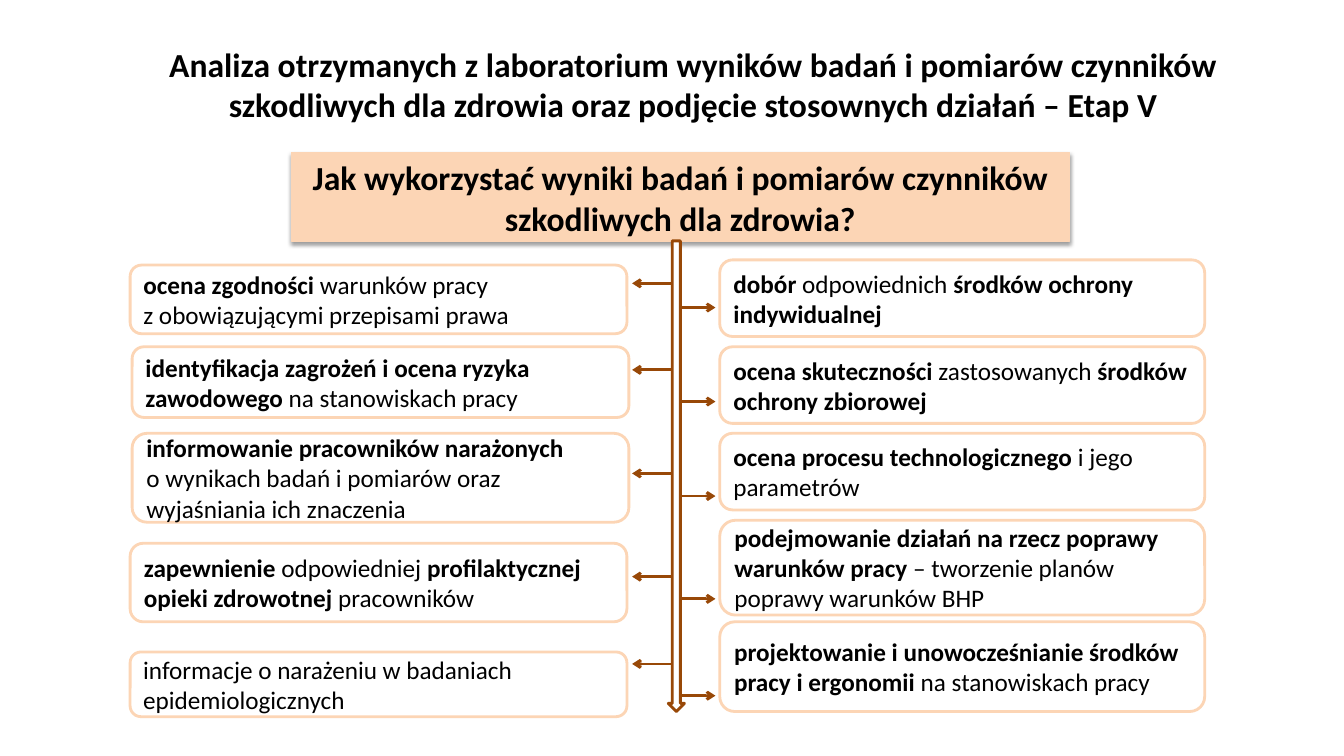
from lxml import etree
from pptx import Presentation
from pptx.dml.color import RGBColor
from pptx.enum.shapes import MSO_CONNECTOR, MSO_SHAPE
from pptx.enum.text import MSO_ANCHOR, MSO_AUTO_SIZE, PP_ALIGN
from pptx.oxml.ns import qn
from pptx.util import Cm, Pt

RECTANGLE = MSO_SHAPE.RECTANGLE
ROUNDED = MSO_SHAPE.ROUNDED_RECTANGLE
DOWN_ARROW = MSO_SHAPE.DOWN_ARROW
STRAIGHT = MSO_CONNECTOR.STRAIGHT
TOP, MIDDLE = MSO_ANCHOR.TOP, MSO_ANCHOR.MIDDLE
LEFT, CENTER = PP_ALIGN.LEFT, PP_ALIGN.CENTER
NO_AUTOFIT = MSO_AUTO_SIZE.NONE
TITLE_ONLY = 5

FONT = "Calibri"
COLORS = {"peach": "FCD5B5", "brown": "984807", "white": "FFFFFF", "black": "000000"}

TITLE = (
    "Analiza otrzymanych z laboratorium wyników badań i pomiarów czynników "
    "szkodliwych dla zdrowia oraz podjęcie stosownych działań – Etap V"
)
QUESTION = "Jak wykorzystać wyniki badań i pomiarów czynników szkodliwych dla zdrowia?"

# Each row: left, top, height, arrow height, text with bold parts between asterisks
LEFT_ROWS = [
    (3.28, 6.68, 1.73, 7.14, "*ocena zgodności *warunków pracy \nz obowiązującymi przepisami prawa"),
    (3.33, 8.74, 1.78, 9.32,
     "*identyfikacja zagrożeń i ocena ryzyka zawodowego *na stanowiskach pracy"),
    (3.33, 10.92, 2.24, 11.93,
     "*informowanie pracowników narażonych \n*"
     "o wynikach badań i pomiarów oraz wyjaśniania ich znaczenia"),
    (3.28, 13.69, 1.98, 14.53,
     "*zapewnienie* odpowiedniej *profilaktycznej opieki zdrowotnej *pracowników"),
    (3.28, 16.43, 1.63, 16.73, "informacje o narażeniu w badaniach epidemiologicznych"),
]
RIGHT_ROWS = [
    (18.14, 6.55, 1.93, 7.75, "*dobór* odpowiednich *środków ochrony indywidualnej*"),
    (18.14, 8.74, 1.93, 10.12, "*ocena skuteczności *zastosowanych *środków ochrony zbiorowej*"),
    (18.14, 10.92, 1.93, 12.5, "*ocena procesu technologicznego *i jego parametrów"),
    (18.14, 13.11, 2.39, 15.09,
     "*podejmowanie działań na rzecz poprawy warunków pracy *"
     "– tworzenie planów poprawy warunków BHP"),
    (18.14, 15.67, 2.26, 17.53,
     "*projektowanie i unowocześnianie środków pracy i ergonomii *na stanowiskach pracy"),
]
COLUMNS = [(LEFT_ROWS, 12.52, 16.94, 15.93), (RIGHT_ROWS, 12.22, 17.12, 18.03)]


def color(name):
    return RGBColor.from_string(COLORS[name])


def write_text(shape, text, size, align, anchor):
    frame = shape.text_frame
    frame.word_wrap = True
    frame.auto_size = NO_AUTOFIT
    frame.vertical_anchor = anchor
    paragraph = frame.paragraphs[0]
    paragraph.alignment = align
    paragraph.font.name = FONT
    paragraph.font.size = Pt(size)
    paragraph.font.color.rgb = color("black")
    for part_index, part in enumerate(text.split("*")):
        for line_index, line in enumerate(part.split("\n")):
            if line_index:
                paragraph.add_line_break()
            if line:
                run = paragraph.add_run()
                run.text = line
                run.font.bold = part_index % 2 == 1


def add_box(slide, kind, left, top, width, height, fill, line, line_width):
    shape = slide.shapes.add_shape(kind, Cm(left), Cm(top), Cm(width), Cm(height))
    shape.shadow.inherit = False
    shape.fill.solid()
    shape.fill.fore_color.rgb = color(fill)
    shape.line.color.rgb = color(line)
    shape.line.width = Pt(line_width)
    return shape


def add_shadow(shape):
    effects = shape._element.spPr.find(qn("a:effectLst"))
    shadow = etree.SubElement(
        effects, qn("a:outerShdw"), blurRad=str(Pt(3.1)), dist=str(Pt(1.6)),
        dir="5400000", rotWithShape="0")
    shade = etree.SubElement(shadow, qn("a:srgbClr"), val=COLORS["black"])
    etree.SubElement(shade, qn("a:alpha"), val="38000")


def add_arrow(slide, start, end, height):
    connector = slide.shapes.add_connector(STRAIGHT, Cm(start), Cm(height), Cm(end), Cm(height))
    connector.line.color.rgb = color("brown")
    connector.line.width = Pt(2)
    etree.SubElement(connector.line._get_or_add_ln(), qn("a:tailEnd"), type="arrow")
    etree.SubElement(connector._element.spPr, qn("a:effectLst"))


def add_title(slide):
    title = slide.shapes.title
    title.left, title.top, title.width, title.height = Cm(3.94), Cm(0.53), Cm(27.05), Cm(3.18)
    write_text(title, f"*{TITLE}*", 24, CENTER, MIDDLE)


def add_banner(slide):
    banner = add_box(slide, RECTANGLE, 7.34, 3.84, 19.61, 2.24, "peach", "peach", 0.75)
    add_shadow(banner)
    write_text(banner, f"*{QUESTION}*", 24, CENTER, TOP)


def add_column(slide, rows, width, arrow_start, arrow_end):
    for left, top, height, arrow_height, text in rows:
        box = add_box(slide, ROUNDED, left, top, width, height, "white", "peach", 2)
        write_text(box, text, 18, LEFT, MIDDLE)
        add_arrow(slide, arrow_start, arrow_end, arrow_height)


def main():
    presentation = Presentation()
    presentation.slide_width, presentation.slide_height = Cm(33.87), Cm(19.05)
    slide = presentation.slides.add_slide(presentation.slide_layouts[TITLE_ONLY])
    add_title(slide)
    add_banner(slide)
    for column in COLUMNS:
        add_column(slide, *column)
    add_box(slide, DOWN_ARROW, 16.84, 6.07, 0.41, 11.86, "white", "brown", 2)
    presentation.save("out.pptx")


if __name__ == "__main__":
    main()
